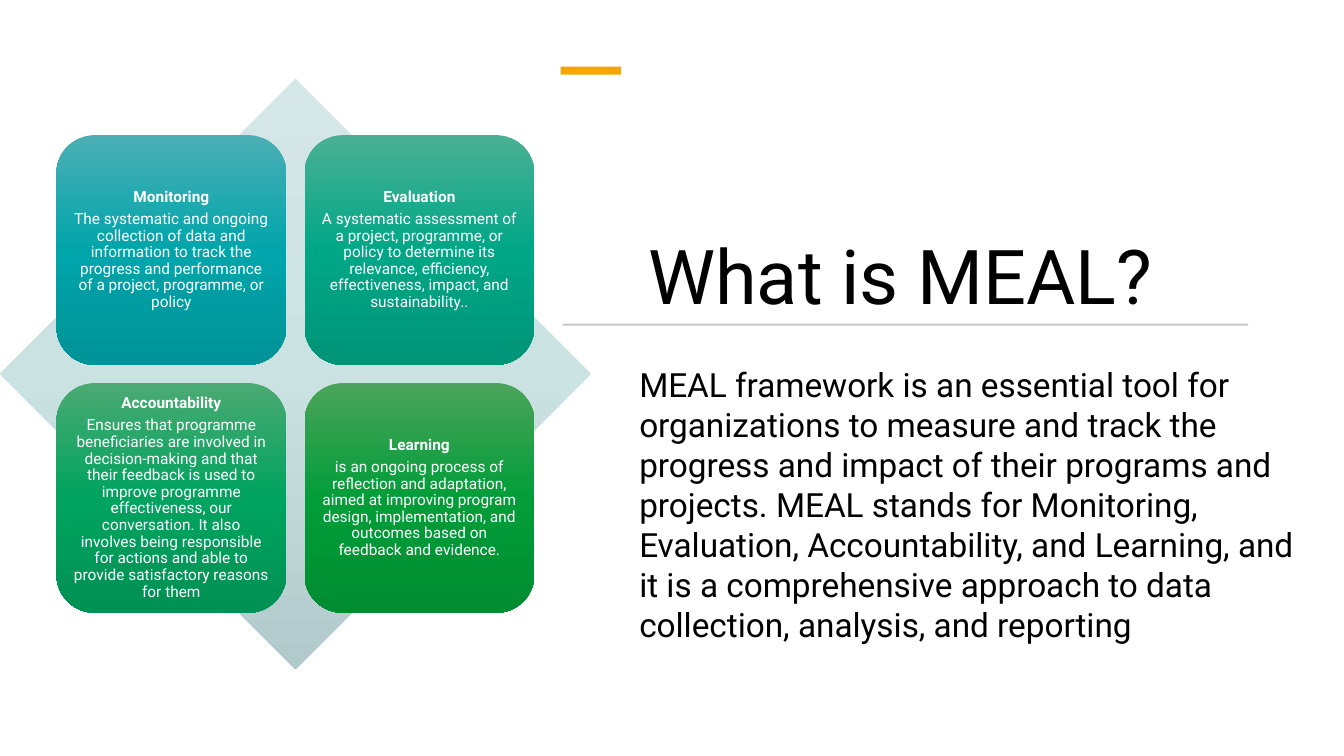
"""Build the slide that introduces the four parts of MEAL."""
from copy import deepcopy

from lxml.etree import SubElement
from pptx import Presentation
from pptx.dml.color import RGBColor
from pptx.enum.shapes import MSO_SHAPE
from pptx.enum.text import MSO_ANCHOR, MSO_AUTO_SIZE, PP_ALIGN
from pptx.oxml.ns import qn
from pptx.util import Inches, Pt


def add_block(shapes, preset, left, top, width, height, *colours):
    """Add a borderless shape, filled plainly or with a downward gradient."""
    block = shapes.add_shape(preset, Inches(left), Inches(top), Inches(width), Inches(height))
    block.shadow.inherit = False
    block.line.fill.background()
    if len(colours) == 1:
        block.fill.solid()
        block.fill.fore_color.rgb = RGBColor.from_string(colours[0])
        return block
    block.fill.gradient()
    block.fill.gradient_angle = 270
    stop_list = block._element.spPr.find(qn("a:gradFill")).find(qn("a:gsLst"))
    stop_list.insert(1, deepcopy(stop_list[0]))
    for stop, position, colour in zip(block.fill.gradient_stops, (0, 0.5, 1), colours):
        stop.position = position
        stop.color.rgb = RGBColor.from_string(colour)
    return block


def add_text(paragraph, wording, size, colour, bold=False):
    """Add one formatted run to a paragraph."""
    run = paragraph.add_run()
    run.text = wording
    run.font.name = "Roboto"
    run.font.size = Pt(size)
    run.font.bold = bold
    run.font.color.rgb = RGBColor.from_string(colour)


deck = Presentation()
deck.slide_width, deck.slide_height = Inches(13.33), Inches(7.5)
slide = deck.slides.add_slide(deck.slide_layouts[1])

heading = slide.shapes.title
heading.left, heading.top, heading.width, heading.height = map(Inches, (6.33, 1.55, 7, 1.68))
heading.text_frame.vertical_anchor = MSO_ANCHOR.BOTTOM
heading.text_frame.auto_size = MSO_AUTO_SIZE.NONE
question = heading.text_frame.paragraphs[0]
question.alignment = PP_ALIGN.LEFT
question.line_spacing = 0.9
add_text(question, "What is MEAL?", 54, "000000")

add_block(slide.shapes, MSO_SHAPE.RECTANGLE, 5.56, 0.66, 0.6, 0.08, "F5A700")
add_block(slide.shapes, MSO_SHAPE.RECTANGLE, 5.58, 3.21, 6.8, 0.02, "C9C9C9")

summary = slide.placeholders[1]
summary.left, summary.top, summary.width, summary.height = map(Inches, (6.24, 3.56, 6.86, 3.09))
summary.text_frame.auto_size = MSO_AUTO_SIZE.NONE
definition = summary.text_frame.paragraphs[0]
properties = definition._p.get_or_add_pPr()
properties.set("marL", "0")
properties.set("indent", "0")
SubElement(properties, qn("a:buNone"))
definition.space_before = Pt(0)
add_text(
    definition,
    "MEAL framework is an essential tool for organizations to measure and track the progress "
    "and impact of their programs and projects. MEAL stands for Monitoring, Evaluation, "
    "Accountability, and Learning, and it is a comprehensive approach to data collection, "
    "analysis, and reporting",
    23.8,
    "000000",
)

parts = [
    ("Monitoring",
     "The systematic and ongoing collection of data and information to track the progress and "
     "performance of a project, programme, or policy",
     ("4BAFB5", "00A5AB", "009398")),
    ("Evaluation",
     "A systematic assessment of a project, programme, or policy to determine its relevance, "
     "efficiency, effectiveness, impact, and sustainability..",
     ("4BB094", "00A787", "009478")),
    ("Accountability",
     "Ensures that programme beneficiaries are involved in decision-making and that their "
     "feedback is used to improve programme effectiveness, our conversation. It also involves "
     "being responsible for actions and able to provide satisfactory reasons for them",
     ("4BAA73", "00A35F", "009154")),
    ("Learning",
     "is an ongoing process of reflection and adaptation, aimed at improving program design, "
     "implementation, and outcomes based on feedback and evidence.",
     ("4BA45B", "029D39", "008D32")),
]
side, pitch = 2.28, 2.46
matrix = slide.shapes.add_group_shape().shapes
add_block(matrix, MSO_SHAPE.DIAMOND, 0, 0.78, 5.86, 5.86, "D5E6E7", "CBE2E3", "B3CACC")
for index, (term, meaning, colours) in enumerate(parts):
    row, column = divmod(index, 2)
    card = add_block(matrix, MSO_SHAPE.ROUNDED_RECTANGLE, 0.56 + column * pitch,
                     1.34 + row * pitch, side, side, *colours)
    frame = card.text_frame
    frame.word_wrap = True
    frame.vertical_anchor = MSO_ANCHOR.MIDDLE
    frame.margin_left = frame.margin_right = Inches(0.05)
    frame.margin_top = frame.margin_bottom = Inches(0.05)
    for paragraph, wording, bold in ((frame.paragraphs[0], term, True),
                                     (frame.add_paragraph(), meaning, False)):
        paragraph.alignment = PP_ALIGN.CENTER
        paragraph.line_spacing = 0.9
        paragraph.space_after = Pt(3.85)
        add_text(paragraph, wording, 11, "FFFFFF", bold)

deck.save("out.pptx")
